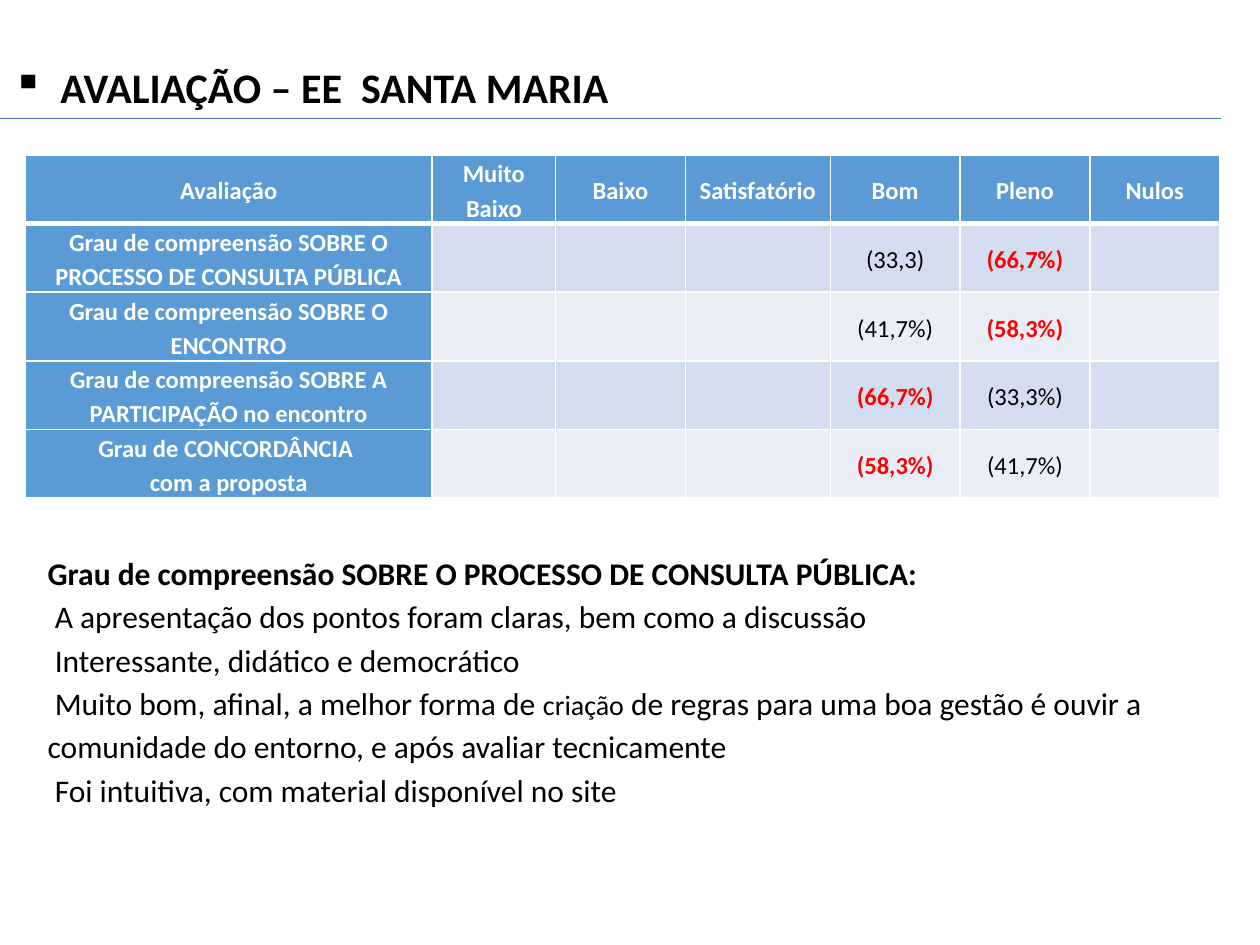
from typing import NamedTuple

from lxml import etree
from pptx import Presentation
from pptx import util as u
from pptx.dml.color import RGBColor
from pptx.enum import shapes, text
from pptx.oxml.ns import qn

BLACK = RGBColor(0x00, 0x00, 0x00)
WHITE = RGBColor(0xFF, 0xFF, 0xFF)
RED = RGBColor(0xFF, 0x00, 0x00)
RULE_BLUE = RGBColor(0x44, 0x72, 0xC4)
HEADER_BLUE = RGBColor(0x5B, 0x9B, 0xD5)
BANDS = (RGBColor(0xD2, 0xDE, 0xEF), RGBColor(0xEA, 0xEF, 0xF7))
FONT = "Calibri"
LINE_SPACING = 1.15

TITLE = "AVALIAÇÃO – EE  SANTA MARIA"
HEADERS = ("Avaliação", "Muito Baixo", "Baixo", "Satisfatório", "Bom", "Pleno", "Nulos")
COLUMN_WIDTHS = (3.23, 0.98, 1.03, 1.15, 1.03, 1.03, 1.03)
TABLE_HEIGHT = 2.68
GOOD, FULL = HEADERS.index("Bom"), HEADERS.index("Pleno")


class Rating(NamedTuple):
    question: str
    good: str
    full: str
    top_column: int


class Piece(NamedTuple):
    words: str
    size: int = 18


RATINGS = (
    Rating("Grau de compreensão SOBRE O PROCESSO DE CONSULTA PÚBLICA", "(33,3)", "(66,7%)", FULL),
    Rating("Grau de compreensão SOBRE O ENCONTRO", "(41,7%)", "(58,3%)", FULL),
    Rating("Grau de compreensão SOBRE A PARTICIPAÇÃO no encontro", "(66,7%)", "(33,3%)", GOOD),
    Rating("Grau de CONCORDÂNCIA \ncom a proposta", "(58,3%)", "(41,7%)", GOOD),
)

COMMENTS_HEADING = "Grau de compreensão SOBRE O PROCESSO DE CONSULTA PÚBLICA:"
COMMENTS = (
    (Piece(" A apresentação dos pontos foram claras, bem como a discussão"),),
    (Piece(" Interessante, didático e democrático"),),
    (
        Piece(" Muito bom, afinal, a melhor forma de "),
        Piece("criação", 16),
        Piece(" de regras para uma boa gestão é ouvir a comunidade do entorno, e após avaliar tecnicamente"),
    ),
    (Piece(" Foi intuitiva, com material disponível no site"),),
)


def style_font(font, size: float, color: RGBColor, bold: bool = False) -> None:
    font.name = FONT
    font.size = u.Pt(size)
    font.bold = bold
    font.color.rgb = color


def place(shape, left: float, top: float, width: float, height: float) -> None:
    shape.left, shape.top = u.Inches(left), u.Inches(top)
    shape.width, shape.height = u.Inches(width), u.Inches(height)


def add_title(slide) -> None:
    title = slide.shapes.title
    place(title, 0, 0.44, 10, 0.5)
    frame = title.text_frame
    frame.text = TITLE
    frame.auto_size = text.MSO_AUTO_SIZE.NONE
    frame.vertical_anchor = text.MSO_ANCHOR.TOP
    paragraph = frame.paragraphs[0]
    paragraph.alignment = text.PP_ALIGN.LEFT
    style_font(paragraph.font, 24, BLACK, bold=True)
    properties = paragraph._p.get_or_add_pPr()
    properties.set("marL", str(u.Inches(0.38)))
    properties.set("indent", str(-u.Inches(0.38)))
    bullet = etree.Element(qn("a:buChar"), char="▪")
    properties.find(qn("a:defRPr")).addprevious(bullet)


def add_rule(slide) -> None:
    y = u.Inches(0.94)
    rule = slide.shapes.add_connector(shapes.MSO_CONNECTOR.STRAIGHT, 0, y, u.Inches(9.69), y)
    rule.line.color.rgb = RULE_BLUE
    rule.line.width = u.Pt(0.5)
    etree.SubElement(rule._element.spPr, qn("a:effectLst"))


def add_borders(cell, top: float, bottom: float) -> None:
    properties = cell._tc.get_or_add_tcPr()
    for side, width in (("L", 1), ("R", 1), ("T", top), ("B", bottom)):
        line = etree.SubElement(properties, qn(f"a:ln{side}"), w=str(u.Pt(width)))
        fill = etree.SubElement(line, qn("a:solidFill"))
        etree.SubElement(fill, qn("a:srgbClr"), val=str(WHITE))


def fill_cell(cell, words: str, row: int, column: int, is_top: bool) -> None:
    is_header = row == 0 or column == 0
    add_borders(cell, top=3 if row == 1 else 1, bottom=3 if row == 0 else 1)
    cell.fill.solid()
    cell.fill.fore_color.rgb = HEADER_BLUE if is_header else BANDS[(row - 1) % 2]
    cell.margin_left = cell.margin_right = u.Inches(0.05)
    cell.margin_top = cell.margin_bottom = 0
    cell.vertical_anchor = text.MSO_ANCHOR.MIDDLE
    cell.text = words
    color = WHITE if is_header else RED if is_top else BLACK
    for paragraph in cell.text_frame.paragraphs:
        paragraph.alignment = text.PP_ALIGN.CENTER
        paragraph.line_spacing = LINE_SPACING
        style_font(paragraph.font, 14, color, bold=is_header or is_top)
        for run in paragraph.runs:
            style_font(run.font, 14, color, bold=is_header or is_top)


def add_ratings_table(slide) -> None:
    row_count = len(RATINGS) + 1
    table = slide.shapes.add_table(
        row_count, len(HEADERS), u.Inches(0.2), u.Inches(1.23),
        u.Inches(sum(COLUMN_WIDTHS)), u.Inches(TABLE_HEIGHT),
    ).table
    for column, width in zip(table.columns, COLUMN_WIDTHS):
        column.width = u.Inches(width)
    for column, header in enumerate(HEADERS):
        fill_cell(table.cell(0, column), header, 0, column, False)
    for row, rating in enumerate(RATINGS, start=1):
        words = {0: rating.question, GOOD: rating.good, FULL: rating.full}
        for column in range(len(HEADERS)):
            fill_cell(table.cell(row, column), words.get(column, ""), row, column,
                      column == rating.top_column)


def add_comments(slide) -> None:
    box = slide.shapes.add_textbox(0, 0, 0, 0)
    place(box, 0.28, 4.3, 9.61, 2.19)
    frame = box.text_frame
    frame.word_wrap = True
    heading = frame.paragraphs[0]
    heading.text = COMMENTS_HEADING
    heading.line_spacing = LINE_SPACING
    style_font(heading.font, 18, BLACK, bold=True)
    comments = frame.add_paragraph()
    comments.line_spacing = LINE_SPACING
    style_font(comments.font, 18, BLACK)
    for index, pieces in enumerate(COMMENTS):
        if index:
            comments.add_line_break()
        for piece in pieces:
            run = comments.add_run()
            run.text = piece.words
            style_font(run.font, piece.size, BLACK)


def main() -> None:
    presentation = Presentation()
    presentation.slide_width, presentation.slide_height = u.Inches(10), u.Inches(7.5)
    slide = presentation.slides.add_slide(presentation.slide_layouts[5])
    add_title(slide)
    add_rule(slide)
    add_ratings_table(slide)
    add_comments(slide)
    presentation.save("out.pptx")


if __name__ == "__main__":
    main()
